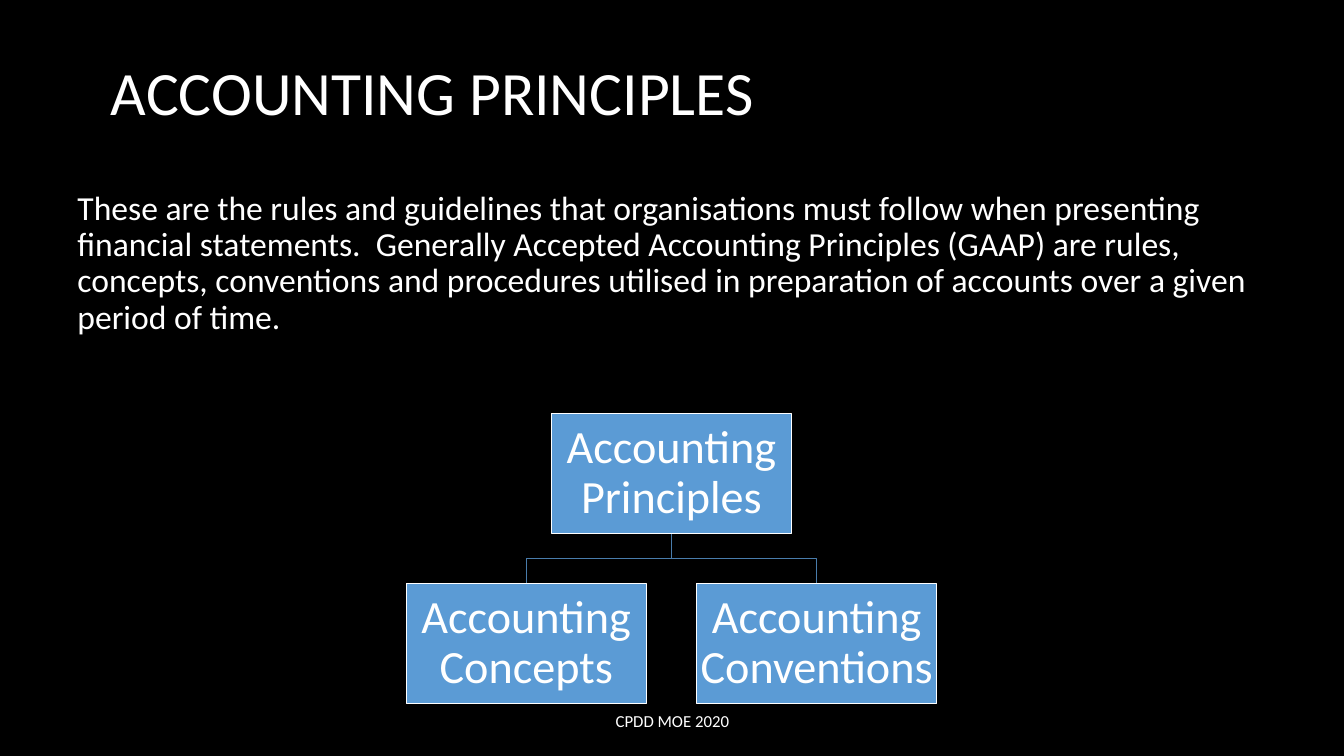
import pptx
import pptx.util
import pptx.dml.color
import pptx.enum.shapes
import pptx.enum.text

Inch = pptx.util.Inches
Point = pptx.util.Pt
Align = pptx.enum.text.PP_ALIGN
Anchor = pptx.enum.text.MSO_ANCHOR

BLACK = pptx.dml.color.RGBColor(0x00, 0x00, 0x00)
WHITE = pptx.dml.color.RGBColor(0xFF, 0xFF, 0xFF)
BLUE = pptx.dml.color.RGBColor(0x5B, 0x9B, 0xD5)
STEEL = pptx.dml.color.RGBColor(0x49, 0x7C, 0xAB)

deck = pptx.Presentation()
deck.slide_width = Inch(13.33)
deck.slide_height = Inch(7.5)
slide = deck.slides.add_slide(deck.slide_layouts[5])
slide.background.fill.solid()
slide.background.fill.fore_color.rgb = BLACK


def write(frame, text, size, align, anchor, space=0.9):
    """Fill a text frame with one white paragraph."""
    frame.word_wrap = True
    frame.auto_size = pptx.enum.text.MSO_AUTO_SIZE.NONE
    frame.vertical_anchor = anchor
    para = frame.paragraphs[0]
    para.alignment = align
    para.line_spacing = space
    run = para.add_run()
    run.text = text
    run.font.size = Point(size)
    run.font.name = "Calibri"
    run.font.color.rgb = WHITE


# Title
title = slide.shapes.title
title.left, title.top = Inch(1), Inch(0.42)
title.width, title.height = Inch(11.32), Inch(1.05)
write(title.text_frame, "ACCOUNTING PRINCIPLES", 44, Align.LEFT, Anchor.MIDDLE)

# Definition
body = slide.shapes.add_textbox(Inch(0.67), Inch(1.85), Inch(12.3), Inch(5.26))
write(
    body.text_frame,
    "These are the rules and guidelines that organisations must follow when "
    "presenting financial statements.  Generally Accepted Accounting Principles "
    "(GAAP) are rules, concepts, conventions and procedures utilised in "
    "preparation of accounts over a given period of time.",
    24, Align.LEFT, Anchor.TOP,
)

# Tree: a root box above two child boxes, offset half a column each way
WIDE, HIGH, GAP = 2.38, 1.19, 0.5
MID, TOP = 6.66, 4.1
STEP = (WIDE + GAP) / 2
LOW = TOP + HIGH + GAP

for side in (1, -1):
    bend = LOW - GAP / 2
    child = MID + side * STEP
    start = (Inch(MID), Inch(LOW - GAP))
    turns = [(MID, bend), (child, bend), (child, LOW)]
    route = slide.shapes.build_freeform(*start)
    route.add_line_segments([(Inch(x), Inch(y)) for x, y in turns], close=False)
    branch = route.convert_to_shape()
    branch.shadow.inherit = False
    branch.fill.background()
    branch.line.color.rgb = STEEL
    branch.line.width = Point(1)

nodes = [
    ("Accounting Principles", 0, TOP),
    ("Accounting Concepts", -1, LOW),
    ("Accounting Conventions", 1, LOW),
]
for label, side, top in nodes:
    left = MID + side * STEP - WIDE / 2
    box = slide.shapes.add_shape(
        pptx.enum.shapes.MSO_SHAPE.RECTANGLE,
        Inch(left), Inch(top), Inch(WIDE), Inch(HIGH),
    )
    box.shadow.inherit = False
    box.fill.solid()
    box.fill.fore_color.rgb = BLUE
    box.line.color.rgb = WHITE
    box.line.width = Point(1)
    frame = box.text_frame
    frame.margin_left = frame.margin_right = Inch(0.02)
    frame.margin_top = frame.margin_bottom = Inch(0.02)
    write(frame, label, 33, Align.CENTER, Anchor.MIDDLE)

# Footer
foot = slide.shapes.add_textbox(Inch(4.42), Inch(6.95), Inch(4.5), Inch(0.4))
write(foot.text_frame, "CPDD MOE 2020", 12, Align.CENTER, Anchor.MIDDLE, 1.0)

deck.save("out.pptx")
